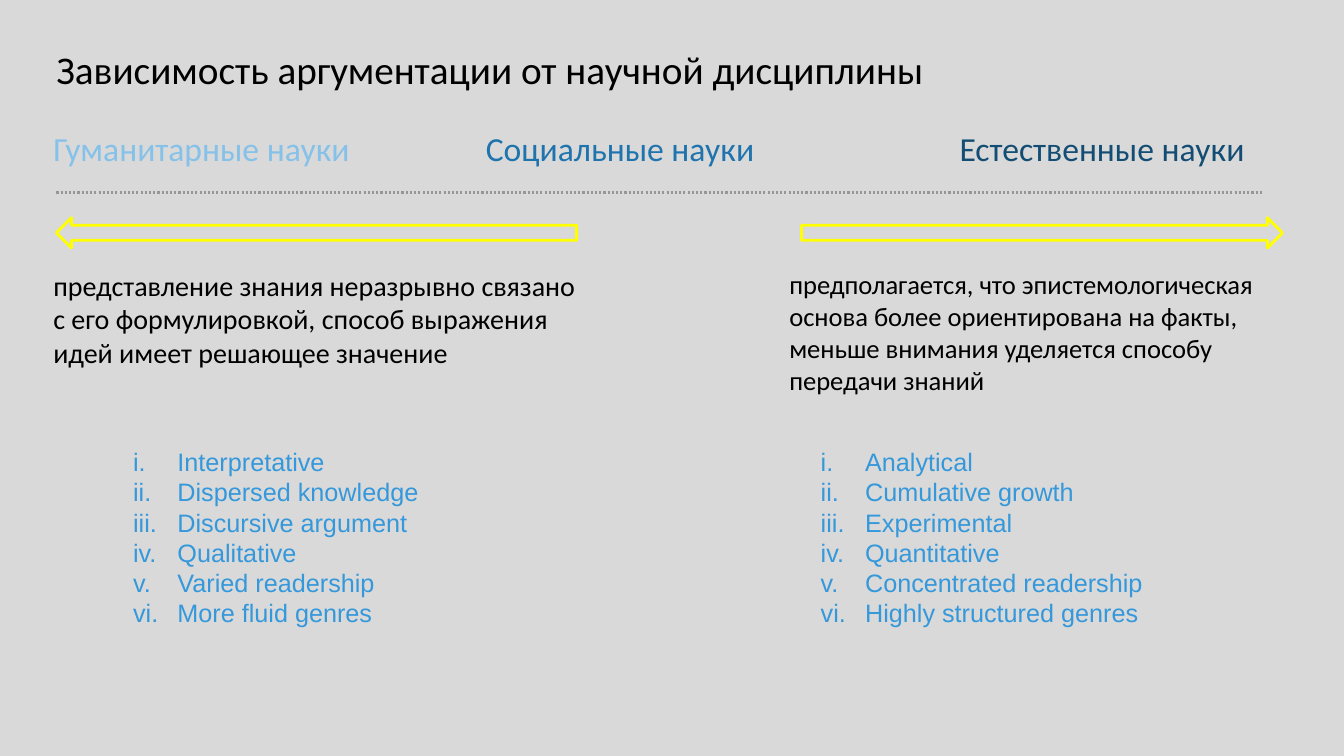
from lxml.etree import SubElement
from pptx import Presentation
from pptx.dml.color import RGBColor
from pptx.enum.dml import MSO_LINE
from pptx.enum.shapes import MSO_CONNECTOR, MSO_SHAPE
from pptx.enum.text import MSO_ANCHOR, MSO_AUTO_SIZE, PP_ALIGN
from pptx.oxml.ns import qn
from pptx.util import Inches, Pt


def rgb(value):
    """Turn a hex string into a colour."""
    return RGBColor.from_string(value)


class SlideBuilder:
    """Hold the style and the current slide, and add its elements."""

    FONT, LIST_FONT = "Calibri", "Arial"
    BACKGROUND, TEXT, LIST = "D9D9D9", "000000", "3498DB"
    ARROW, RULE = "FFFF00", "969696"

    def __init__(self, prs):
        """Add a slide with a title and two lists."""
        self.slide = prs.slides.add_slide(prs.slide_layouts[3])
        fill = self.slide.background.fill
        fill.solid()
        fill.fore_color.rgb = rgb(self.BACKGROUND)

    def place(self, sp, left, top, width, height):
        """Move and size a placeholder."""
        sp.left, sp.top = Inches(left), Inches(top)
        sp.width, sp.height = Inches(width), Inches(height)

    def frame(self, sp, auto_size):
        """Prepare a text frame that wraps and starts at the top."""
        tf = sp.text_frame
        tf.word_wrap = True
        tf.auto_size = auto_size
        tf.vertical_anchor = MSO_ANCHOR.TOP
        return tf

    def run(self, p, text, size, color, font=FONT):
        """Add one formatted run."""
        r = p.add_run()
        r.text = text
        r.font.name, r.font.size = font, Pt(size)
        r.font.color.rgb = rgb(color)

    def title(self, text, box, size=28):
        """Fill the title placeholder."""
        sp = self.slide.shapes.title
        self.place(sp, *box)
        tf = self.frame(sp, MSO_AUTO_SIZE.NONE)
        tf.margin_left = tf.margin_right = tf.margin_top = tf.margin_bottom = 0
        p = tf.paragraphs[0]
        p.alignment = PP_ALIGN.LEFT
        self.run(p, text, size, self.TEXT)

    def text(self, runs, box, size, tabs=()):
        """Add a text box with one paragraph of (text, colour) runs."""
        sp = self.slide.shapes.add_textbox(*map(Inches, box))
        p = self.frame(sp, MSO_AUTO_SIZE.SHAPE_TO_FIT_TEXT).paragraphs[0]
        if tabs:
            tab_list = SubElement(p._p.get_or_add_pPr(), qn("a:tabLst"))
            for tab in tabs:
                SubElement(tab_list, qn("a:tab"), pos=str(Inches(tab)), algn="l")
        for text, color in runs:
            self.run(p, text, size, color)

    def numbered_list(self, index, items, box, size=18, indent=0.44):
        """Fill a body placeholder with a list in roman numerals."""
        sp = self.slide.placeholders[index]
        self.place(sp, *box)
        tf = self.frame(sp, MSO_AUTO_SIZE.NONE)
        for i, item in enumerate(items):
            p = tf.add_paragraph() if i else tf.paragraphs[0]
            pPr = p._p.get_or_add_pPr()
            pPr.set("marL", str(Inches(indent)))
            pPr.set("indent", str(-Inches(indent)))
            SubElement(pPr, qn("a:buFont"), typeface="+mj-lt")
            SubElement(pPr, qn("a:buAutoNum"), type="romanLcPeriod")
            p.space_before = Pt(0)
            self.run(p, item, size, self.LIST, self.LIST_FONT)

    def rule(self, left, right, top):
        """Add a dotted horizontal line."""
        line = self.slide.shapes.add_connector(
            MSO_CONNECTOR.STRAIGHT, Inches(left), Inches(top), Inches(right), Inches(top))
        line.line.color.rgb = rgb(self.RULE)
        line.line.width = Pt(1.5)
        line.line.dash_style = MSO_LINE.ROUND_DOT
        SubElement(line._element.spPr, qn("a:effectLst"))

    def arrow(self, kind, box):
        """Add an outlined block arrow."""
        sp = self.slide.shapes.add_shape(kind, *map(Inches, box))
        sp.shadow.inherit = False
        sp.fill.background()
        sp.line.color.rgb = rgb(self.ARROW)
        sp.line.width = Pt(2)


def main():
    """Build the slide and save it."""
    prs = Presentation()
    prs.slide_width, prs.slide_height = Inches(13.33), Inches(7.5)
    s = SlideBuilder(prs)

    s.title("Зависимость аргументации от научной дисциплины", (0.56, 0.45, 12.18, 1.17))
    s.text([("Гуманитарные науки", "85C1E9"),
            ("\tСоциальные науки", "1F74AD"),
            ("\tЕстественные науки", "144D73")],
           (0.43, 1.22, 12.31, 0.5), 24, tabs=(4.29, 8.99))
    s.rule(0.56, 12.52, 1.91)

    s.arrow(MSO_SHAPE.LEFT_ARROW, (0.56, 2.16, 5.16, 0.3))
    s.arrow(MSO_SHAPE.RIGHT_ARROW, (7.95, 2.16, 4.77, 0.3))

    s.text([("представление знания неразрывно связано с его формулировкой, "
             "способ выражения идей имеет решающее значение", s.TEXT)],
           (0.43, 2.61, 5.55, 1.11), 20)
    s.text([("предполагается, что эпистемологическая основа более ориентирована на факты, "
             "меньше внимания уделяется способу передачи знаний", s.TEXT)],
           (7.73, 2.61, 5.28, 1.38), 19)

    s.numbered_list(1, ["Interpretative", "Dispersed knowledge", "Discursive argument",
                        "Qualitative", "Varied readership", "More fluid genres"],
                    (1.22, 4.38, 4.5, 1.92))
    s.numbered_list(2, ["Analytical", "Cumulative growth", "Experimental", "Quantitative",
                        "Concentrated readership", "Highly structured genres"],
                    (8.04, 4.38, 3.84, 1.92))
    prs.save("out.pptx")


if __name__ == "__main__":
    main()
